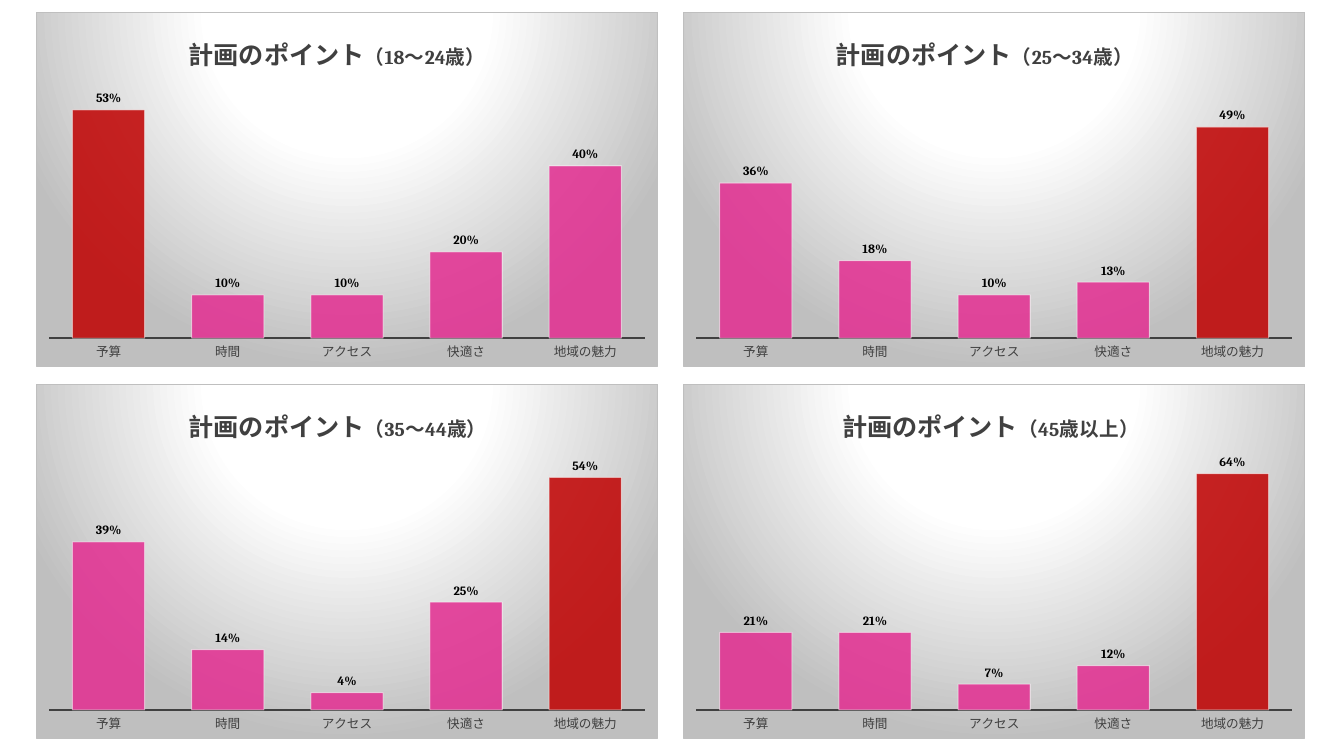
import dataclasses

import lxml.etree
import pptx
import pptx.chart.chart
import pptx.chart.data
import pptx.dml.color
import pptx.enum.chart
import pptx.oxml
import pptx.oxml.ns
import pptx.util

FONT = "Cambria"
INK, PINK, RED = "404040", "E32D91", "C00000"
EDGE, WHITE, BLACK = "BFBFBF", "FFFFFF", "000000"
CATS = ["予算", "時間", "アクセス", "快適さ", "地域の魅力"]
LEFT, TOP = 0.91, 0.3
WIDE, HIGH = 15.67, 8.95
STEP_X, STEP_Y = 16.31, 9.37


@dataclasses.dataclass
class Panel:
    ages: str
    vals: list[float]
    row: int
    col: int
    peak: float = 0.6
    head_x: float = 0.24


PANELS = [
    Panel("（45歳以上）", [0.21, 0.21, 0.07, 0.12, 0.64], 1, 1, 0.7, 0.25),
    Panel("（25～34歳）", [0.36, 0.18, 0.1, 0.13, 0.49], 0, 1),
    Panel("（18～24歳）", [0.53, 0.1, 0.1, 0.2, 0.4], 0, 0),
    Panel("（35～44歳）", [0.39, 0.14, 0.04, 0.25, 0.54], 1, 0),
]


def color(code: str) -> pptx.dml.color.RGBColor:
    return pptx.dml.color.RGBColor.from_string(code)


def set_font(font, size: float, code: str, bold: bool = False) -> None:
    font.name = FONT
    font.size = pptx.util.Pt(size)
    font.bold = bold
    font.color.rgb = color(code)


def set_line(line, code: str, width: float) -> None:
    line.color.rgb = color(code)
    line.width = pptx.util.Pt(width)


def place(node, index: int, **spots: float) -> None:
    """Give a chart part a fixed layout, in shares of the chart."""
    for old in node.findall(pptx.oxml.ns.qn("c:layout")):
        node.remove(old)
    inner = '<c:layoutTarget val="inner"/>' if "w" in spots else ""
    modes = "".join(f'<c:{key}Mode val="edge"/>' for key in ("x", "y"))
    sizes = "".join(f'<c:{key} val="{val}"/>' for key, val in spots.items())
    node.insert(index, pptx.oxml.parse_xml(
        f'<c:layout {pptx.oxml.ns.nsdecls("c")}><c:manualLayout>'
        f"{inner}{modes}{sizes}</c:manualLayout></c:layout>"))


def fade(chart: pptx.chart.chart.Chart, route: str, share: int) -> None:
    for node in chart.element.xpath(f".//c:ser//c:spPr/{route}/a:srgbClr"):
        alpha = lxml.etree.SubElement(node, pptx.oxml.ns.qn("a:alpha"))
        alpha.set("val", str(share * 1000))


def add_glow(chart: pptx.chart.chart.Chart) -> None:
    """Fill the chart area with a round gradient and a thin border."""
    stops = "".join(
        f'<a:gs pos="{spot * 1000}"><a:srgbClr val="{code}"/></a:gs>'
        for spot, code in ((0, WHITE), (39, WHITE), (100, EDGE)))
    chart.element.find(pptx.oxml.ns.qn("c:chart")).addnext(
        pptx.oxml.parse_xml(
            f'<c:spPr {pptx.oxml.ns.nsdecls("c", "a")}><a:gradFill>'
            f'<a:gsLst>{stops}</a:gsLst><a:path path="circle">'
            '<a:fillToRect l="50000" t="-80000" r="50000" b="180000"/>'
            f'</a:path></a:gradFill><a:ln w="{pptx.util.Pt(0.75)}">'
            f'<a:solidFill><a:srgbClr val="{EDGE}"/></a:solidFill>'
            "</a:ln></c:spPr>"))


def add_head(chart: pptx.chart.chart.Chart, panel: Panel) -> None:
    chart.has_title = True
    title = chart.chart_title
    title.include_in_layout = False
    para = title.text_frame.paragraphs[0]
    for text, size in (("計画のポイント", 18), (panel.ages, 14)):
        run = para.add_run()
        run.text = text
        set_font(run.font, size, INK, True)
    place(title.element if hasattr(title, "element") else title._element,
          1, x=panel.head_x, y=0.05)


def set_axes(chart: pptx.chart.chart.Chart, peak: float) -> None:
    none = pptx.enum.chart.XL_TICK_MARK.NONE
    base = chart.category_axis
    base.major_tick_mark = base.minor_tick_mark = none
    base.has_major_gridlines = False
    set_font(base.tick_labels.font, 9, INK)
    set_line(base.format.line, INK, 1.5)
    scale = chart.value_axis
    scale.visible = False
    scale.has_major_gridlines = False
    scale.minimum_scale, scale.maximum_scale = 0, peak


def set_bars(chart: pptx.chart.chart.Chart, vals: list[float]) -> None:
    plot = chart.plots[0]
    plot.gap_width = 65
    plot.vary_by_categories = False
    bars = plot.series[0]
    bars.invert_if_negative = False
    best = bars.points[vals.index(max(vals))]
    for form, code in ((bars.format, PINK), (best.format, RED)):
        form.fill.solid()
        form.fill.fore_color.rgb = color(code)
        set_line(form.line, WHITE, 0.75)
    fade(chart, "a:solidFill", 85)
    fade(chart, "a:ln/a:solidFill", 50)
    plot.has_data_labels = True
    tags = plot.data_labels
    tags.show_value = True
    tags.number_format = "0%"
    tags.number_format_is_linked = False
    tags.position = pptx.enum.chart.XL_LABEL_POSITION.OUTSIDE_END
    set_font(tags.font, 9, BLACK, True)


def add_panel(slide, panel: Panel) -> None:
    data = pptx.chart.data.CategoryChartData(number_format="0%")
    data.categories = CATS
    data.add_series("Series 1", panel.vals)
    chart = slide.shapes.add_chart(
        pptx.enum.chart.XL_CHART_TYPE.COLUMN_CLUSTERED,
        pptx.util.Cm(LEFT + panel.col * STEP_X),
        pptx.util.Cm(TOP + panel.row * STEP_Y),
        pptx.util.Cm(WIDE), pptx.util.Cm(HIGH), data).chart
    chart.has_legend = False
    set_font(chart.font, 10, BLACK)
    add_head(chart, panel)
    set_axes(chart, panel.peak)
    set_bars(chart, panel.vals)
    area = chart.element.xpath("c:chart/c:plotArea")[0]
    place(area, 0, x=0.02, y=0.19, w=0.96, h=0.73)
    add_glow(chart)


def main() -> None:
    deck = pptx.Presentation()
    deck.slide_width = pptx.util.Cm(33.87)
    deck.slide_height = pptx.util.Cm(19.05)
    slide = deck.slides.add_slide(deck.slide_layouts[6])
    for panel in PANELS:
        add_panel(slide, panel)
    deck.save("out.pptx")


if __name__ == "__main__":
    main()
